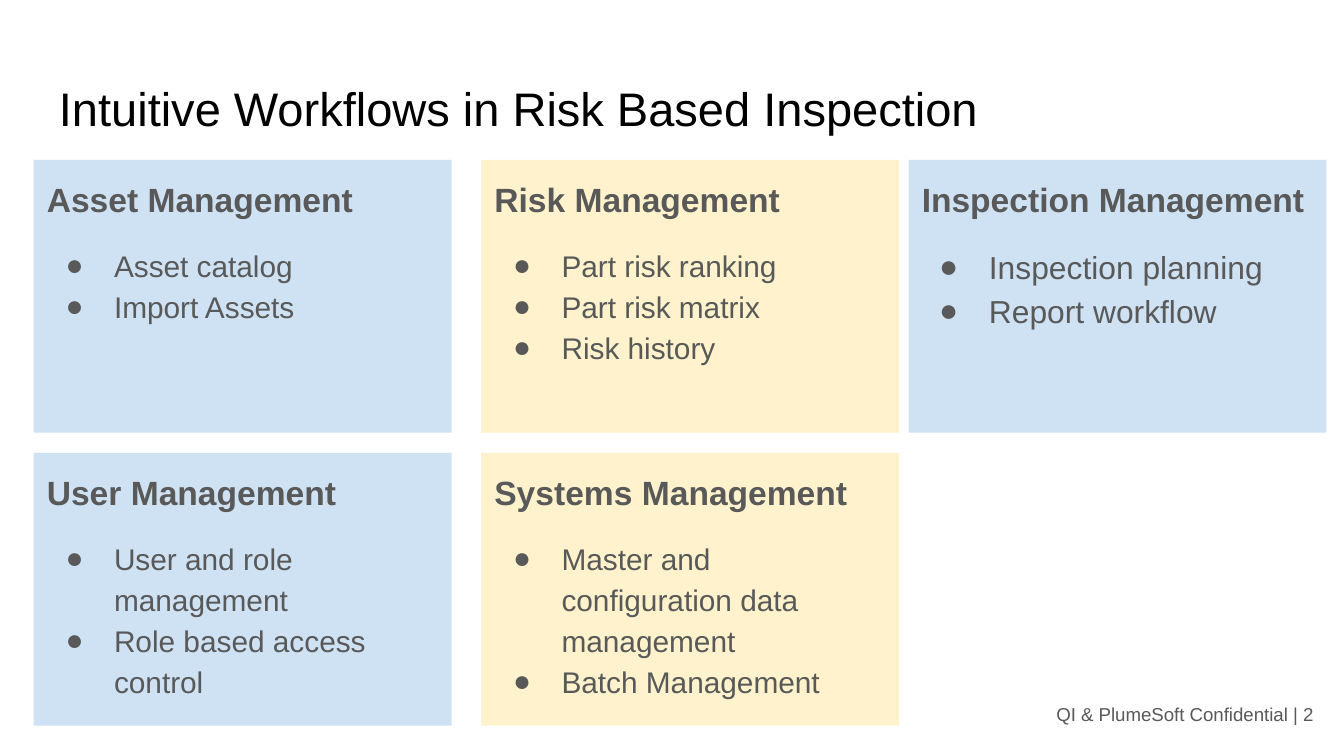
from dataclasses import dataclass

from lxml import etree
from pptx import Presentation
from pptx import util as u
from pptx.dml.color import RGBColor
from pptx.enum import shapes, text
from pptx.oxml import ns


@dataclass(frozen=True)
class Theme:
    font: str = "Arial"
    black: str = "000000"
    gray: str = "595959"
    blue: str = "CFE2F3"
    yellow: str = "FFF2CC"
    title_size: float = 25.2
    heading_size: float = 18
    item_size: float = 16
    large_item_size: float = 17
    footer_size: float = 10


@dataclass(frozen=True)
class Card:
    column: int
    row: int
    heading: str
    items: tuple[str, ...]
    fill: str
    item_size: float = Theme.item_size


THEME = Theme()
SLIDE_WIDTH = 10
SLIDE_HEIGHT = SLIDE_WIDTH * 9 / 16
COLUMNS = (0.25, 3.58, 6.76)
ROWS = (1.19, 3.37)
CARD_WIDTH, CARD_HEIGHT = 3.11, 2.03
INSET = 0.1

CARDS = (
    Card(0, 0, "Asset Management", ("Asset catalog", "Import Assets"), THEME.blue),
    Card(1, 0, "Risk Management",
         ("Part risk ranking", "Part risk matrix", "Risk history"), THEME.yellow),
    Card(2, 0, "Inspection Management", ("Inspection planning", "Report workflow"),
         THEME.blue, THEME.large_item_size),
    Card(0, 1, "User Management",
         ("User and role management", "Role based access control"), THEME.blue),
    Card(1, 1, "Systems Management",
         ("Master and configuration data management", "Batch Management"), THEME.yellow),
)


def prepare_frame(box, anchor=text.MSO_ANCHOR.TOP):
    frame = box.text_frame
    frame.word_wrap = True
    frame.vertical_anchor = anchor
    frame.margin_left = frame.margin_right = u.Inches(INSET)
    frame.margin_top = frame.margin_bottom = u.Inches(INSET)
    return frame


def add_bullet(para, indent: float) -> None:
    properties = para._p.get_or_add_pPr()
    properties.set("marL", str(u.Inches(0.5)))
    properties.set("indent", str(u.Inches(-indent)))
    color = etree.SubElement(properties, ns.qn("a:buClr"))
    etree.SubElement(color, ns.qn("a:srgbClr"), val=THEME.gray)
    etree.SubElement(properties, ns.qn("a:buFont"), typeface=THEME.font)
    etree.SubElement(properties, ns.qn("a:buChar"), char="●")


def write(para, words: str, *, size: float, color: str = THEME.gray,
          bold: bool = False, align=text.PP_ALIGN.LEFT,
          line_spacing: float = 1.0, space_before: float = 0) -> None:
    para.alignment = align
    para.line_spacing = line_spacing
    para.space_before = u.Pt(space_before)
    span = para.add_run()
    span.text = words
    span.font.name = THEME.font
    span.font.size = u.Pt(size)
    span.font.bold = bold
    span.font.color.rgb = RGBColor.from_string(color)


def add_card(page, card: Card) -> None:
    box = page.shapes.add_shape(
        shapes.MSO_SHAPE.RECTANGLE,
        u.Inches(COLUMNS[card.column]), u.Inches(ROWS[card.row]),
        u.Inches(CARD_WIDTH), u.Inches(CARD_HEIGHT))
    box.shadow.inherit = False
    box.fill.solid()
    box.fill.fore_color.rgb = RGBColor.from_string(card.fill)
    box.line.fill.background()
    frame = prepare_frame(box)
    write(frame.paragraphs[0], card.heading, size=THEME.heading_size,
          bold=True, line_spacing=1.15)
    indent = 0.36 if card.item_size == THEME.item_size else 0.37
    for index, item in enumerate(card.items):
        para = frame.add_paragraph()
        add_bullet(para, indent)
        write(para, item, size=card.item_size, line_spacing=1.15,
              space_before=0 if index else 12)


def main() -> None:
    deck = Presentation()
    deck.slide_width = u.Inches(SLIDE_WIDTH)
    deck.slide_height = u.Inches(SLIDE_HEIGHT)
    page = deck.slides.add_slide(deck.slide_layouts[6])

    title = page.shapes.add_textbox(
        u.Inches(0.34), u.Inches(0.49), u.Inches(9.32), u.Inches(0.63))
    write(prepare_frame(title).paragraphs[0],
          "Intuitive Workflows in Risk Based Inspection",
          size=THEME.title_size, color=THEME.black)

    footer = page.shapes.add_textbox(
        u.Inches(6.12), u.Inches(5.1), u.Inches(3.75), u.Inches(0.43))
    write(prepare_frame(footer, text.MSO_ANCHOR.MIDDLE).paragraphs[0],
          "QI & PlumeSoft Confidential | 2",
          size=THEME.footer_size, align=text.PP_ALIGN.RIGHT)

    for card in CARDS:
        add_card(page, card)
    deck.save("out.pptx")


if __name__ == "__main__":
    main()
